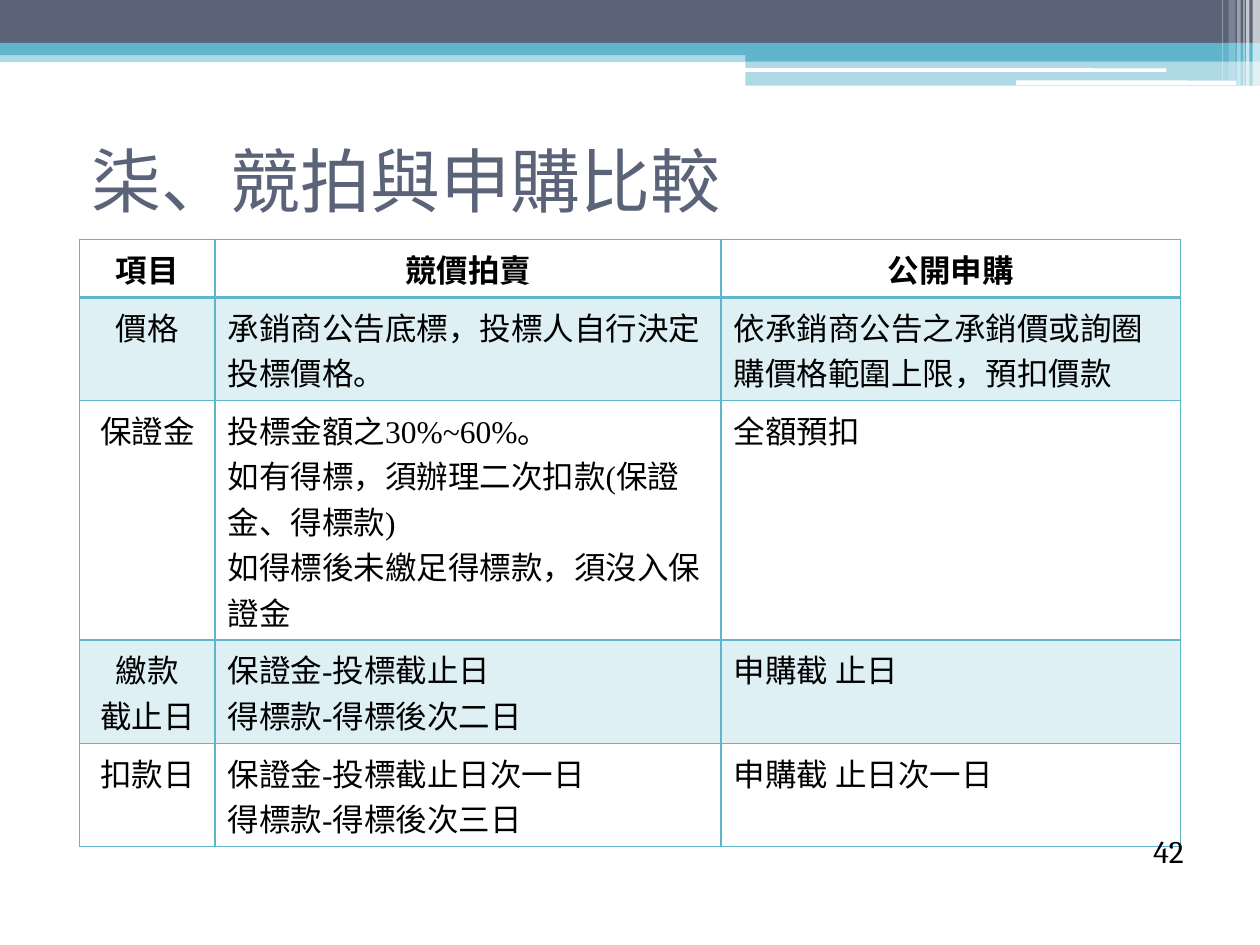
import pptx
import pptx.util
import pptx.dml.color
import pptx.enum.shapes
import pptx.enum.text
import pptx.oxml
import pptx.oxml.ns
from lxml import etree

Pt = pptx.util.Pt
SHAPES = pptx.enum.shapes.MSO_SHAPE
ALIGN = pptx.enum.text.PP_ALIGN
ANCHOR = pptx.enum.text.MSO_ANCHOR
COLORS = {"teal": "60B5CC", "slate": "5A6378", "white": "FFFFFF", "black": "000000"}
SERIF = "Times New Roman"

ROWS = [
    ["項目", "競價拍賣", "公開申購"],
    ["價格", "承銷商公告底標，投標人自行決定投標價格。",
     "依承銷商公告之承銷價或詢圈購價格範圍上限，預扣價款"],
    ["保證金", "投標金額之30%~60%。\n如有得標，須辦理二次扣款(保證金、得標款)\n"
     "如得標後未繳足得標款，須沒入保證金", "全額預扣"],
    ["繳款\n截止日", "保證金-投標截止日\n得標款-得標後次二日", "申購截 止日"],
    ["扣款日", "保證金-投標截止日次一日\n得標款-得標後次三日", "申購截 止日次一日"],
]


def rgb(name):
    return pptx.dml.color.RGBColor.from_string(COLORS[name])


def paint(fill, parent, color, alpha=100):
    """Solid fill; parent is the XML element that holds it."""
    fill.solid()
    fill.fore_color.rgb = rgb(color)
    if alpha < 100:
        tone = parent.find(pptx.oxml.ns.qn("a:solidFill"))[0]
        etree.SubElement(tone, pptx.oxml.ns.qn("a:alpha"), val=str(alpha * 1000))


def write(frame, text, size=18, font=SERIF, color="black", bold=False,
          align=ALIGN.LEFT, anchor=ANCHOR.TOP, margin=0, indent=0):
    frame.word_wrap = True
    frame.vertical_anchor = anchor
    for index, line in enumerate(text.split("\n")):
        para = frame.paragraphs[0] if index == 0 else frame.add_paragraph()
        para.alignment = align
        if margin:
            properties = para._p.get_or_add_pPr()
            properties.set("marL", str(Pt(margin)))
            properties.set("indent", str(Pt(indent)))
        span = para.add_run()
        span.text = line
        span.font.size, span.font.name, span.font.bold = Pt(size), font, bold
        span.font.color.rgb = rgb(color)


def add_text(page, box, text, **style):
    shape = page.shapes.add_textbox(*map(Pt, box))
    write(shape.text_frame, text, **style)


def add_bar(page, box, color, alpha=100, kind=SHAPES.RECTANGLE):
    bar = page.shapes.add_shape(kind, *map(Pt, box))
    bar.shadow.inherit = False
    bar.line.fill.background()
    paint(bar.fill, bar._element.spPr, color, alpha)


def add_banner(page, box):
    left, top, width, height = box
    half = left + 426
    half_width = left + width - half
    # Full-width bands, then the deeper bands on the right
    add_bar(page, (left, top + 29, width, 6.5), "teal", 50)
    add_bar(page, (left, top, width, 24.5), "slate")
    add_bar(page, (left, top + 24.5, width, 7), "teal")
    add_bar(page, (half, top + 28, half_width, 7), "teal")
    add_bar(page, (half, top + 35, half_width, height - 35), "teal", 50)
    # White slits
    for x, y, w, h in [(425.5, 39, 241, 2), (580.5, 46, 126, 2.7)]:
        add_bar(page, (left + x, top + y, w, h), "white", kind=SHAPES.ROUNDED_RECTANGLE)
    # Translucent stripes, placed from the right edge
    for offset, w, h, alpha in [(4.2, 4.2, 49, 65), (8, 2, 49, 65), (9.5, 0.7, 49, 60),
                                (13, 2, 49, 40), (18, 4, 46, 20), (21.7, 0.7, 46, 30)]:
        add_bar(page, (left + width - offset, top, w, h), "white", alpha)


def add_borders(cell, widths):
    properties = cell._tc.get_or_add_tcPr()
    for side, width in zip("LRTB", widths):
        properties.append(pptx.oxml.parse_xml(
            f'<a:ln{side} {pptx.oxml.ns.nsdecls("a")} w="{Pt(width)}"><a:solidFill>'
            f'<a:srgbClr val="{COLORS["teal"]}"/></a:solidFill></a:ln{side}>'))


def add_comparison(page, box, columns, heights):
    table = page.shapes.add_table(len(ROWS), len(columns), *map(Pt, box)).table
    for column, width in zip(table.columns, columns):
        column.width = Pt(width)
    for r, (texts, height) in enumerate(zip(ROWS, heights)):
        table.rows[r].height = Pt(height)
        for c, text in enumerate(texts):
            cell = table.cell(r, c)
            centred = r == 0 or c == 0
            write(cell.text_frame, text, bold=r == 0,
                  align=ALIGN.CENTER if centred else ALIGN.LEFT)
            add_borders(cell, (1, 1, 2 if r == 1 else 1, 2 if r == 0 else 1))
            if r % 2:
                paint(cell.fill, cell._tc.tcPr, "teal", 20)
            else:
                cell.fill.background()


def main():
    deck = pptx.Presentation()
    deck.slide_width, deck.slide_height = Pt(720), Pt(540)
    page = deck.slides.add_slide(deck.slide_layouts[6])
    add_banner(page, (0, 0, 720, 49))
    add_text(page, (36, 60.5, 648, 84), "柒、競拍與申購比較", size=40, color="slate",
             anchor=ANCHOR.MIDDLE, margin=49, indent=-40)
    heights = [33, 59, 137, 59, 59]
    add_comparison(page, (45.4, 136.8, 629.3, sum(heights)), [77.5, 289.2, 262.6], heights)
    add_text(page, (623.5, 471.6, 60, 28.8), "42", font="Cambria",
             align=ALIGN.RIGHT, anchor=ANCHOR.BOTTOM)
    deck.save("out.pptx")


if __name__ == "__main__":
    main()
